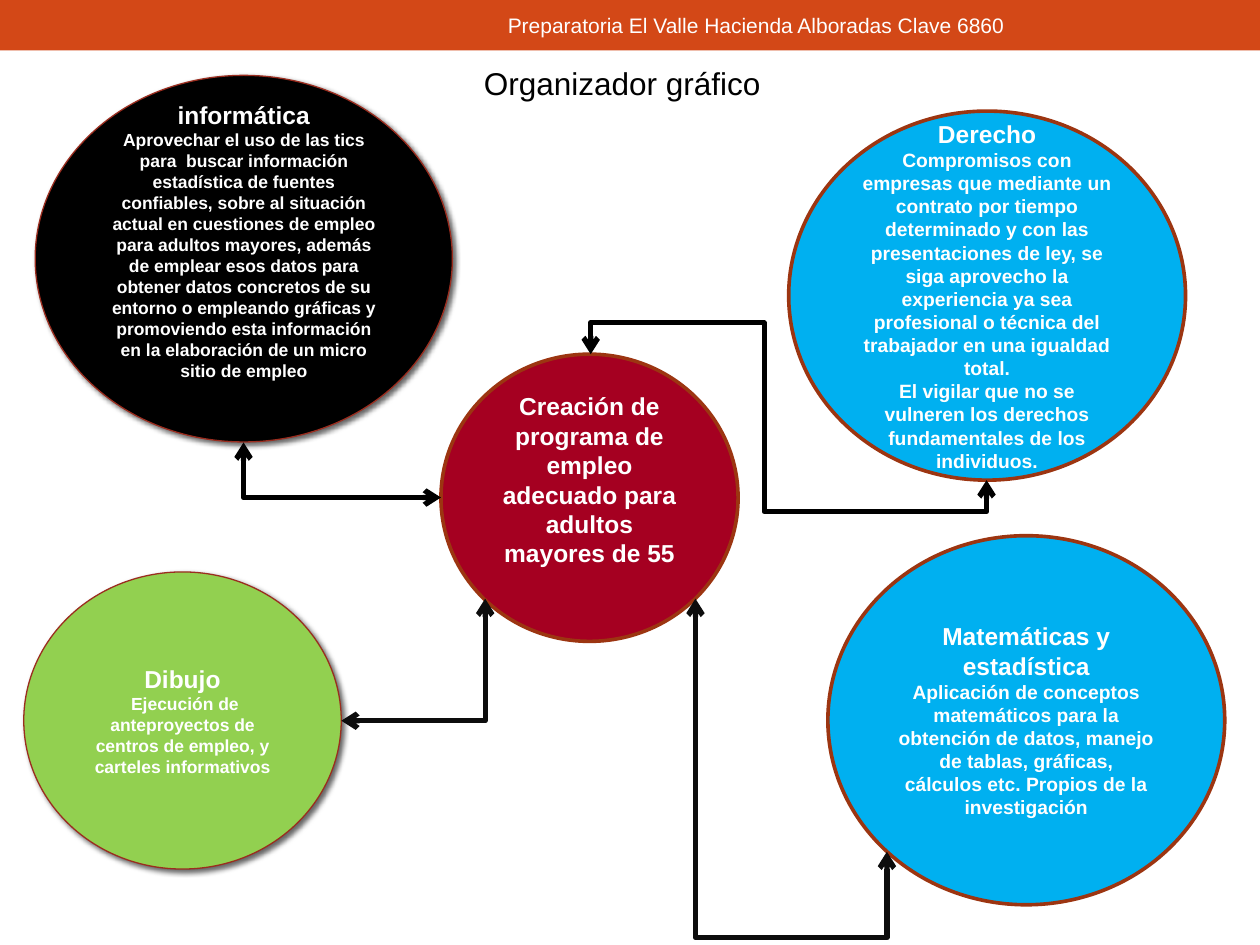
"""Build a graphic organizer slide that links four subjects to a central employment programme."""
from lxml.etree import SubElement
from pptx import Presentation
from pptx.dml.color import RGBColor
from pptx.enum.shapes import MSO_CONNECTOR, MSO_SHAPE
from pptx.enum.text import MSO_ANCHOR as ANCHOR, MSO_AUTO_SIZE as AUTO_SIZE, PP_ALIGN as ALIGN
from pptx.oxml.ns import qn
from pptx.util import Cm, Pt

COLORS = {
    "bar": "D34817", "white": "FFFFFF", "black": "000000", "ink": "0D0D0D",
    "crimson": "A50021", "sky": "00B0F0", "lime": "92D050",
    "rust": "9C3511", "brick": "9B2D1F",
}


def color(name):
    return RGBColor.from_string(COLORS[name])


def write(shape, lines, align, font_color, bold=False):
    frame = shape.text_frame
    frame.text = "\n".join(text for text, size in lines)
    for paragraph, (text, size) in zip(frame.paragraphs, lines):
        paragraph.alignment = align
        paragraph.font.name = "Arial"
        paragraph.font.size = Pt(size)
        paragraph.font.bold = bold
        paragraph.font.color.rgb = color(font_color)
    return frame


presentation = Presentation()
presentation.slide_width, presentation.slide_height = Cm(25.4), Cm(19.05)
slide = presentation.slides.add_slide(presentation.slide_layouts[5])
shapes = slide.shapes

bar = shapes.add_shape(MSO_SHAPE.RECTANGLE, 0, 0, Cm(25.4), Cm(1.02))
bar.fill.solid()
bar.fill.fore_color.rgb = color("bar")
bar.line.fill.background()
bar.shadow.inherit = False

header = shapes.add_textbox(Cm(9.53), Cm(0.05), Cm(11.43), Cm(0.91))
header_frame = write(
    header, [("Preparatoria El Valle Hacienda Alboradas Clave 6860", 12)], ALIGN.CENTER, "white")
header_frame.word_wrap = True
header_frame.vertical_anchor = ANCHOR.MIDDLE

title = shapes.title
title.left, title.top, title.width, title.height = Cm(9.5), Cm(1.17), Cm(6.15), Cm(1.02)
title_frame = write(title, [("Organizador gráfico", 18)], ALIGN.LEFT, "black")
title_frame.word_wrap = False
title_frame.auto_size = AUTO_SIZE.NONE
title_frame.vertical_anchor = ANCHOR.TOP

bubbles = [
    ((0.71, 1.52, 8.41, 7.39), "black", True, 0.86, [
        ("informática", 14),
        ("Aprovechar el uso de las tics para  buscar información estadística de fuentes "
         "confiables, sobre al situación actual en cuestiones de empleo para adultos mayores, "
         "además de emplear esos datos para obtener datos concretos de su entorno o empleando "
         "gráficas y promoviendo esta información en la elaboración de un micro sitio de empleo",
         10)]),
    ((8.89, 7.14, 5.99, 5.79), "crimson", False, 0.86, [
        ("Creación de programa de empleo adecuado para adultos mayores de 55", 14)]),
    ((15.9, 2.24, 8, 7.44), "sky", False, 0.13, [
        ("Derecho", 14),
        ("Compromisos con empresas que mediante un contrato por tiempo determinado y con las "
         "presentaciones de ley, se siga aprovecho la experiencia ya sea profesional o técnica "
         "del trabajador en una igualdad total.", 11),
        ("El vigilar que no se vulneren los derechos fundamentales de los individuos.", 11)]),
    ((0.48, 11.53, 6.4, 5.99), "lime", True, 0.13, [
        ("Dibujo", 14),
        (" Ejecución de anteproyectos de centros de empleo, y carteles informativos", 10)]),
    ((16.69, 10.8, 8, 7.44), "sky", False, 0.13, [
        ("Matemáticas y estadística", 14),
        ("Aplicación de conceptos matemáticos para la obtención de datos, manejo de tablas, "
         "gráficas, cálculos etc. Propios de la investigación", 11)]),
]
for box, fill, raised, bottom_margin, lines in bubbles:
    bubble = shapes.add_shape(MSO_SHAPE.OVAL, *map(Cm, box))
    bubble.fill.solid()
    bubble.fill.fore_color.rgb = color(fill)
    bubble.line.color.rgb = color("brick" if raised else "rust")
    bubble.line.width = Pt(0.75 if raised else 2.08)
    bubble.shadow.inherit = False
    if raised:
        effects = bubble._element.spPr.find(qn("a:effectLst"))
        shadow = SubElement(effects, qn("a:outerShdw"), blurRad=str(Pt(3)), dist=str(Pt(2)),
                            dir="2700000", algn="ctr", rotWithShape="0")
        shade = SubElement(shadow, qn("a:srgbClr"), val=COLORS["black"])
        SubElement(shade, qn("a:alpha"), val="60000")
    frame = write(bubble, lines, ALIGN.CENTER, "white", bold=True)
    frame.word_wrap = True
    frame.vertical_anchor = ANCHOR.MIDDLE
    frame.margin_bottom = Cm(bottom_margin)

links = [
    ((4.91, 8.92), (8.89, 10.03), 270, True, "bentConnector2", [], "black"),
    ((19.89, 9.68), (11.91, 7.14), 90, True, "bentConnector5", [-24900, 56200, 124900], "black"),
    ((9.78, 12.07), (6.88, 14.53), 90, False, "bentConnector2", [], "ink"),
    ((14.02, 12.07), (17.88, 17.17), 270, True, "bentConnector3", [134000], "ink"),
]
for (x1, y1), (x2, y2), rotation, flipped, preset, adjustments, line_color in links:
    center_x, center_y = (x1 + x2) / 2, (y1 + y2) / 2
    half_width, half_height = abs(y2 - y1) / 2, abs(x2 - x1) / 2
    if flipped:
        half_width = -half_width
    connector = shapes.add_connector(
        MSO_CONNECTOR.ELBOW,
        Cm(center_x - half_width), Cm(center_y - half_height),
        Cm(center_x + half_width), Cm(center_y + half_height))
    connector.line.color.rgb = color(line_color)
    connector.line.width = Pt(3)
    properties = connector._element.spPr
    properties.find(qn("a:xfrm")).set("rot", str(rotation * 60000))
    geometry = properties.find(qn("a:prstGeom"))
    geometry.set("prst", preset)
    guides = geometry.find(qn("a:avLst"))
    for number, value in enumerate(adjustments, 1):
        SubElement(guides, qn("a:gd"), name=f"adj{number}", fmla=f"val {value}")
    for end in ("a:headEnd", "a:tailEnd"):
        SubElement(properties.find(qn("a:ln")), qn(end), type="arrow")
    SubElement(properties, qn("a:effectLst"))

presentation.save("out.pptx")
